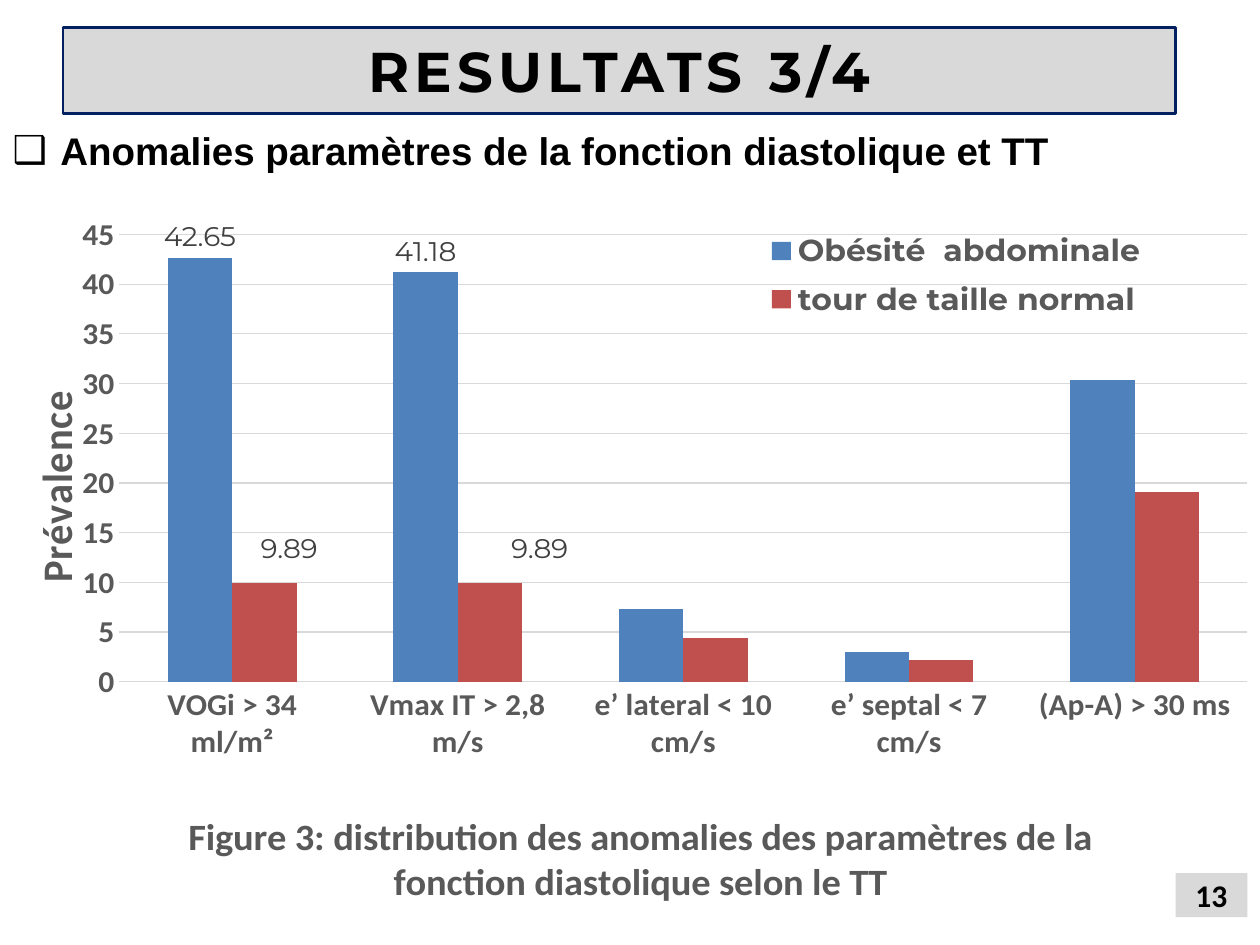
from lxml.etree import SubElement
from pptx import Presentation
from pptx.chart.data import CategoryChartData
from pptx.dml.color import RGBColor
from pptx.enum.chart import XL_CHART_TYPE, XL_LABEL_POSITION, XL_LEGEND_POSITION, XL_TICK_MARK
from pptx.enum.shapes import MSO_SHAPE
from pptx.enum.text import MSO_ANCHOR, MSO_AUTO_SIZE, PP_ALIGN
from pptx.oxml import parse_xml
from pptx.oxml.ns import nsdecls, qn
from pptx.util import Inches, Pt

COLORS = {"panel": "D9D9D9", "border": "002060", "text": "000000", "axis": "595959",
          "label": "404040", "obese": "4F81BD", "normal": "C0504D"}


def style(font, size, name, color, bold=True):
    font.size, font.name, font.bold = Pt(size), name, bold
    font.color.rgb = RGBColor.from_string(COLORS[color])


def set_layout(parent, index, **parts):
    """Place a chart part by shares of the chart's size."""
    for old in parent.findall(qn("c:layout")):
        parent.remove(old)
    layout = parse_xml(f'<c:layout {nsdecls("c")}><c:manualLayout/></c:layout>')
    for tag, value in parts.items():
        SubElement(layout[0], qn(f"c:{tag}")).set("val", str(value))
    parent.insert(index, layout)


prs = Presentation()
prs.slide_width, prs.slide_height = Inches(10), Inches(7.5)
s = prs.slides.add_slide(prs.slide_layouts[1])

# Title and body text
title, body = s.placeholders
title.left, title.top, title.width, title.height = map(Inches, (0.5, 0.22, 8.83, 0.68))
body.left, body.top, body.width, body.height = map(Inches, (0, 0.96, 10, 5.7))
title.line.color.rgb = RGBColor.from_string(COLORS["border"])
title.line.width = Pt(1.5)
body.text_frame.text = "Anomalies paramètres de la fonction diastolique et TT"
p = body.text_frame.paragraphs[0]
p.alignment = PP_ALIGN.JUSTIFY
style(p.runs[0].font, 22, "Arial", "text")
pPr = p._p.get_or_add_pPr()
pPr.set("marL", str(Inches(0.38)))
pPr.set("indent", str(-Inches(0.38)))
SubElement(pPr, qn("a:buFont")).set("typeface", "Arial")
SubElement(pPr, qn("a:buChar")).set("char", "❑")

# Title panel and page number
number = s.shapes.add_shape(MSO_SHAPE.RECTANGLE, *map(Inches, (9.33, 6.93, 0.57, 0.35)))
number.shadow.inherit = False
number.line.fill.background()
for sp, text, size, name in ((title, "RESULTATS 3/4", 32, "Montserrat"),
                             (number, "13", 18, "Calibri")):
    sp.fill.solid()
    sp.fill.fore_color.rgb = RGBColor.from_string(COLORS["panel"])
    tf = sp.text_frame
    tf.text = text
    tf.auto_size = MSO_AUTO_SIZE.NONE
    tf.vertical_anchor = MSO_ANCHOR.MIDDLE
    p = tf.paragraphs[0]
    p.alignment = PP_ALIGN.CENTER
    style(p.runs[0].font, size, name, "text")
title.text_frame.paragraphs[0].runs[0].font._element.set("spc", "300")

# Chart
data = CategoryChartData()
data.categories = ["VOGi > 34 ml/m²", "Vmax IT > 2,8 m/s", "e’ lateral < 10 cm/s",
                   "e’ septal < 7 cm/s", "(Ap-A) > 30 ms"]
data.add_series("Obésité  abdominale", (42.65, 41.18, 7.35, 2.94, 30.36))
data.add_series("tour de taille normal", (9.89, 9.89, 4.4, 2.2, 19.05))
chart = s.shapes.add_chart(XL_CHART_TYPE.COLUMN_CLUSTERED,
                           *map(Inches, (0.16, 1.7, 9.84, 5.58)), data).chart
chart.has_title = False
style(chart.font, 10, "Calibri", "text", False)
plot = chart.plots[0]
plot.gap_width, plot.overlap, plot.vary_by_categories = 150, 0, False
set_layout(chart._chartSpace.chart.plotArea, 0, layoutTarget="inner", xMode="edge",
           yMode="edge", x=0.08, y=0.03, w=0.91, h=0.66)

# Axes and their titles
caption = ("Figure 3: distribution des anomalies des paramètres de la "
           "fonction diastolique selon le TT")
for axis, text, size, x, y in ((chart.category_axis, caption, 22, 0.13, 0.87),
                               (chart.value_axis, "Prévalence", 24, 0, 0.26)):
    axis.major_tick_mark = axis.minor_tick_mark = XL_TICK_MARK.NONE
    axis.format.line.fill.background()
    style(axis.tick_labels.font, 18, "Calibri", "axis")
    tf = axis.axis_title.text_frame
    tf.text = text
    style(tf.paragraphs[0].runs[0].font, size, "Calibri", "axis")
    set_layout(axis.axis_title._element, 1, xMode="edge", yMode="edge", x=x, y=y)
bodyPr = tf._txBody.bodyPr
bodyPr.set("rot", "-5400000")
bodyPr.set("vert", "horz")
axis = chart.value_axis
axis.minimum_scale, axis.maximum_scale, axis.major_unit = 0, 45, 5
grid = axis.major_gridlines.format.line
grid.color.rgb = RGBColor.from_string(COLORS["panel"])
grid.width = Pt(0.75)

# Columns, with value labels on the first two categories and no leader lines
for series, color in zip(plot.series, ("obese", "normal")):
    series.format.fill.solid()
    series.format.fill.fore_color.rgb = RGBColor.from_string(COLORS[color])
    for i in range(2):
        label = series.points[i].data_label
        style(label.font, 16, "Montserrat", "label", False)
        label.position = XL_LABEL_POSITION.OUTSIDE_END
    series.data_labels.show_value = False
    for leader in series._element.findall(".//" + qn("c:showLeaderLines")):
        leader.set("val", "0")
for dLbl, x in zip(plot.series[1]._element.findall(".//" + qn("c:dLbl")), (0.02, 0.04)):
    set_layout(dLbl, 1, x=x, y=-0.02)

# Legend
chart.has_legend = True
chart.legend.position = XL_LEGEND_POSITION.BOTTOM
chart.legend.include_in_layout = False
style(chart.legend.font, 18, "Montserrat", "axis")
set_layout(chart.legend._element, 1, xMode="edge", yMode="edge", x=0.6, y=0.01, w=0.31, h=0.16)

prs.save("out.pptx")
